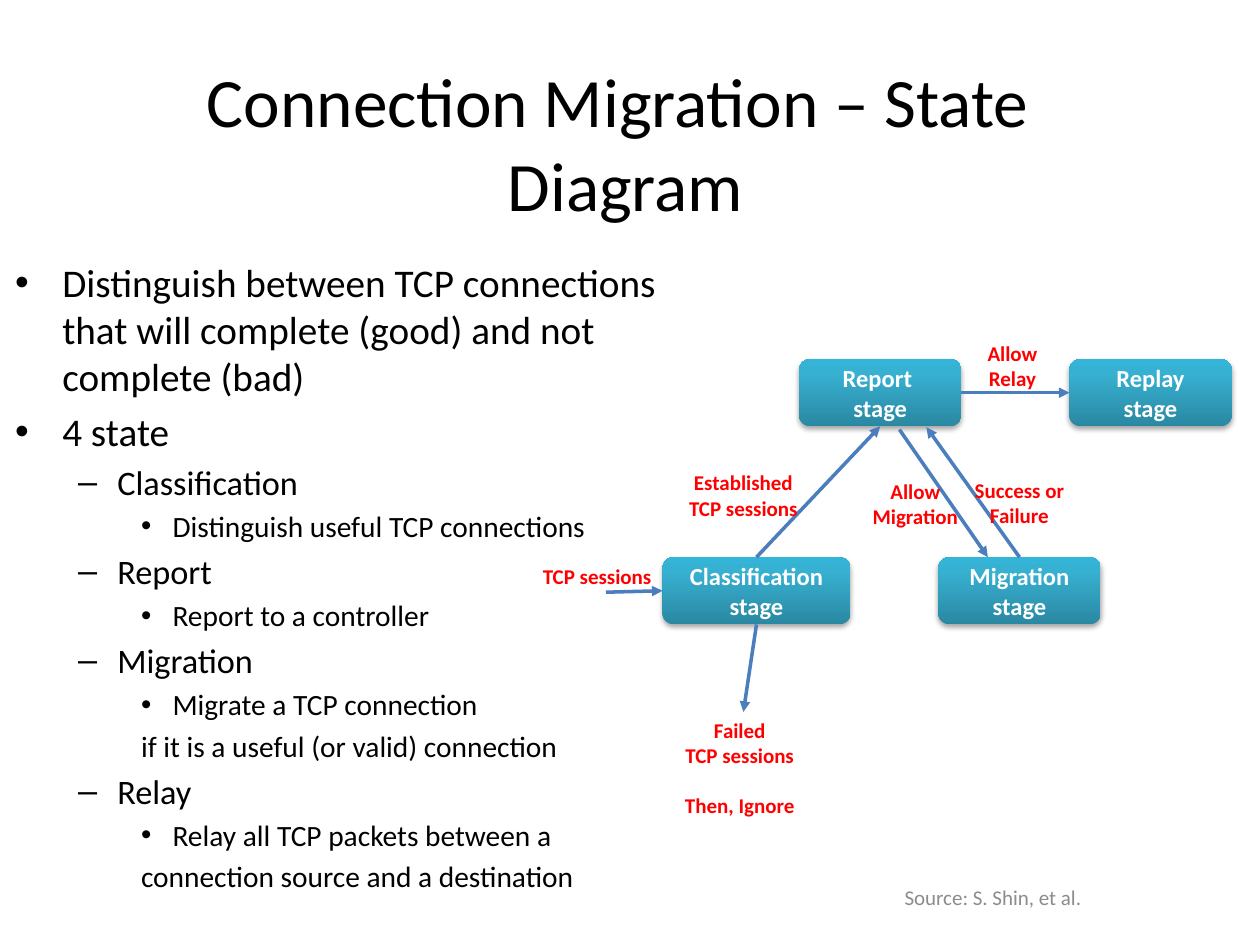
from dataclasses import dataclass

import pptx
import pptx.dml.color
import pptx.enum.shapes
import pptx.enum.text
import pptx.oxml
import pptx.oxml.ns
import pptx.util

Pt = pptx.util.Pt
ALIGN = pptx.enum.text.PP_ALIGN
ANCHOR = pptx.enum.text.MSO_ANCHOR
AUTO_SIZE = pptx.enum.text.MSO_AUTO_SIZE
TOP, LEFT, BOTTOM, RIGHT = range(4)


@dataclass(frozen=True)
class Theme:
    font: str = "Calibri"
    black: str = "000000"
    white: str = "FFFFFF"
    label: str = "FF0000"
    source: str = "8C8C8C"
    arrow: str = "4B7EBC"
    stage_stops: tuple = ((0, "2A88A2"), (80, "37B1D2"), (100, "34B4D6"))
    title_size: float = 39.6
    level_sizes: tuple = (22.4, 19.6, 16.8)
    stage_size: float = 14
    small_size: float = 12


THEME = Theme()
STAGE_HEIGHT = 38.4
UPPER_ROW, LOWER_ROW = 205.2, 318.4

# Level and text; a continuation line belongs to the level but has no bullet.
OUTLINE = [
    (0, "Distinguish between TCP connections that will complete (good) and not complete (bad)"),
    (0, "4 state"),
    (1, "Classification"),
    (2, "Distinguish useful TCP connections"),
    (1, "Report"),
    (2, "Report to a controller"),
    (1, "Migration"),
    (2, "Migrate a TCP connection"),
    (2, "if it is a useful (or valid) connection"),
    (1, "Relay"),
    (2, "Relay all TCP packets between a"),
    (2, "connection source and a destination"),
]
CONTINUATIONS = {8, 11}

STAGES = {
    "classification": (378.6, LOWER_ROW, 107.4, ["Classification stage"]),
    "report": (456.6, UPPER_ROW, 92.8, ["Report ", "stage"]),
    "migration": (536.2, LOWER_ROW, 92.8, ["Migration", "stage"]),
    "replay": (611.1, UPPER_ROW, 92.8, ["Replay", "stage"]),
}

# Each end is a stage with its side, or a free point.
TRANSITIONS = [
    ((346.3, 338.4), ("classification", LEFT)),
    (("classification", TOP), ("report", BOTTOM)),
    ((514, 245.5), (564.5, 318.4)),
    (("migration", TOP), (529.4, 244.1)),
    (("classification", BOTTOM), (424.8, 406.8)),
    (("report", RIGHT), ("replay", LEFT)),
]

LABELS = [
    (303.1, 318.5, 77.8, 21.8, ["TCP sessions"]),
    (385.9, 265, 77.8, 36.4, ["Established", "TCP sessions"]),
    (491, 269.7, 64.1, 36.4, ["Allow", "Migration"]),
    (549.4, 269.3, 66.2, 36.4, ["Success or", "Failure"]),
    (556.6, 191.2, 43.9, 36.4, ["Allow", "Relay"]),
    (383.8, 406.2, 77.8, 65.5, ["Failed", "TCP sessions", "Then, Ignore"]),
]


def rgb(value):
    return pptx.dml.color.RGBColor.from_string(value)


def add_xml(parent, xml):
    declared = xml.replace(" ", f" {pptx.oxml.ns.nsdecls('a')} ", 1)
    parent.append(pptx.oxml.parse_xml(declared))


def write(paragraph, text, size, color=THEME.black, bold=None, align=None):
    paragraph.text = text
    paragraph.alignment = align
    for run in paragraph.runs:
        run.font.name = THEME.font
        run.font.size = Pt(size)
        run.font.bold = bold
        run.font.color.rgb = rgb(color)


def write_lines(frame, lines, **style):
    for index, line in enumerate(lines):
        paragraph = frame.add_paragraph() if index else frame.paragraphs[0]
        write(paragraph, line, **style)


def place(shape, left, top, width, height):
    shape.left, shape.top = Pt(left), Pt(top)
    shape.width, shape.height = Pt(width), Pt(height)


def fill_title(title):
    place(title, 44.6, 28.8, 625.7, 104.4)
    title.text_frame.auto_size = AUTO_SIZE.NONE
    title.text_frame.vertical_anchor = ANCHOR.MIDDLE
    write(title.text_frame.paragraphs[0], "Connection Migration – State \vDiagram",
          size=THEME.title_size, align=ALIGN.CENTER)


def fill_outline(body):
    """Write the list; bullets and indents come from the template's levels."""
    place(body, 1.4, 144, 388.8, 342.7)
    frame = body.text_frame
    frame.auto_size = AUTO_SIZE.NONE
    for index, (level, text) in enumerate(OUTLINE):
        paragraph = frame.add_paragraph() if index else frame.paragraphs[0]
        paragraph.level = level
        write(paragraph, text, size=THEME.level_sizes[level])
        if index in CONTINUATIONS:
            properties = paragraph._p.get_or_add_pPr()
            properties.set("marL", str(Pt(72)))
            properties.set("indent", "0")
            add_xml(properties, "<a:buNone />")


def add_stage(slide, left, top, width, lines):
    stage = slide.shapes.add_shape(
        pptx.enum.shapes.MSO_SHAPE.ROUNDED_RECTANGLE,
        Pt(left), Pt(top), Pt(width), Pt(STAGE_HEIGHT))
    stage.line.fill.background()
    stage.fill.gradient()
    stage.fill.gradient_angle = 90
    stops = stage.fill.gradient_stops._gsLst
    for stop in list(stops):
        stops.remove(stop)
    for position, color in THEME.stage_stops:
        add_xml(stops, f'<a:gs pos="{position * 1000}"><a:srgbClr val="{color}"/></a:gs>')
    add_xml(stage._element.spPr,
            f'<a:effectLst ><a:outerShdw blurRad="{Pt(3.1)}" dist="{Pt(1.8)}" dir="5400000" '
            f'rotWithShape="0"><a:srgbClr val="{THEME.black}"><a:alpha val="35000"/>'
            '</a:srgbClr></a:outerShdw></a:effectLst>')
    stage.text_frame.word_wrap = True
    stage.text_frame.vertical_anchor = ANCHOR.MIDDLE
    write_lines(stage.text_frame, lines, size=THEME.stage_size, color=THEME.white,
                bold=True, align=ALIGN.CENTER)
    return stage


def add_transition(slide, stages, start, end):
    points = [(0, 0) if start[0] in stages else start, (0, 0) if end[0] in stages else end]
    arrow = slide.shapes.add_connector(
        pptx.enum.shapes.MSO_CONNECTOR.STRAIGHT,
        *(Pt(value) for point in points for value in point))
    if start[0] in stages:
        arrow.begin_connect(stages[start[0]], start[1])
    if end[0] in stages:
        arrow.end_connect(stages[end[0]], end[1])
    arrow.line.color.rgb = rgb(THEME.arrow)
    arrow.line.width = Pt(2)
    add_xml(arrow.line._get_or_add_ln(), '<a:tailEnd type="triangle"/>')
    add_xml(arrow._element.spPr, "<a:effectLst />")


def add_label(slide, left, top, width, height, lines):
    label = slide.shapes.add_textbox(Pt(left), Pt(top), Pt(width), Pt(height))
    frame = label.text_frame
    frame.word_wrap = False
    frame.auto_size = AUTO_SIZE.SHAPE_TO_FIT_TEXT
    write_lines(frame, lines, size=THEME.small_size, color=THEME.label, bold=True,
                align=ALIGN.CENTER if len(lines) > 1 else ALIGN.LEFT)
    for remark in frame.paragraphs[2:]:
        remark.space_before = Pt(14.6)


def add_source(slide):
    source = slide.shapes.add_textbox(Pt(509.8), Pt(498.2), Pt(192.2), Pt(28.8))
    source.text_frame.word_wrap = True
    source.text_frame.vertical_anchor = ANCHOR.MIDDLE
    write(source.text_frame.paragraphs[0], "Source: S. Shin, et al.",
          size=THEME.small_size, color=THEME.source)


def main():
    deck = pptx.Presentation()
    deck.slide_width, deck.slide_height = Pt(720), Pt(540)
    slide = deck.slides.add_slide(deck.slide_layouts[1])
    fill_title(slide.shapes.title)
    fill_outline(slide.placeholders[1])
    stages = {name: add_stage(slide, *layout) for name, layout in STAGES.items()}
    for start, end in TRANSITIONS:
        add_transition(slide, stages, start, end)
    for label in LABELS:
        add_label(slide, *label)
    add_source(slide)
    deck.save("out.pptx")


if __name__ == "__main__":
    main()
